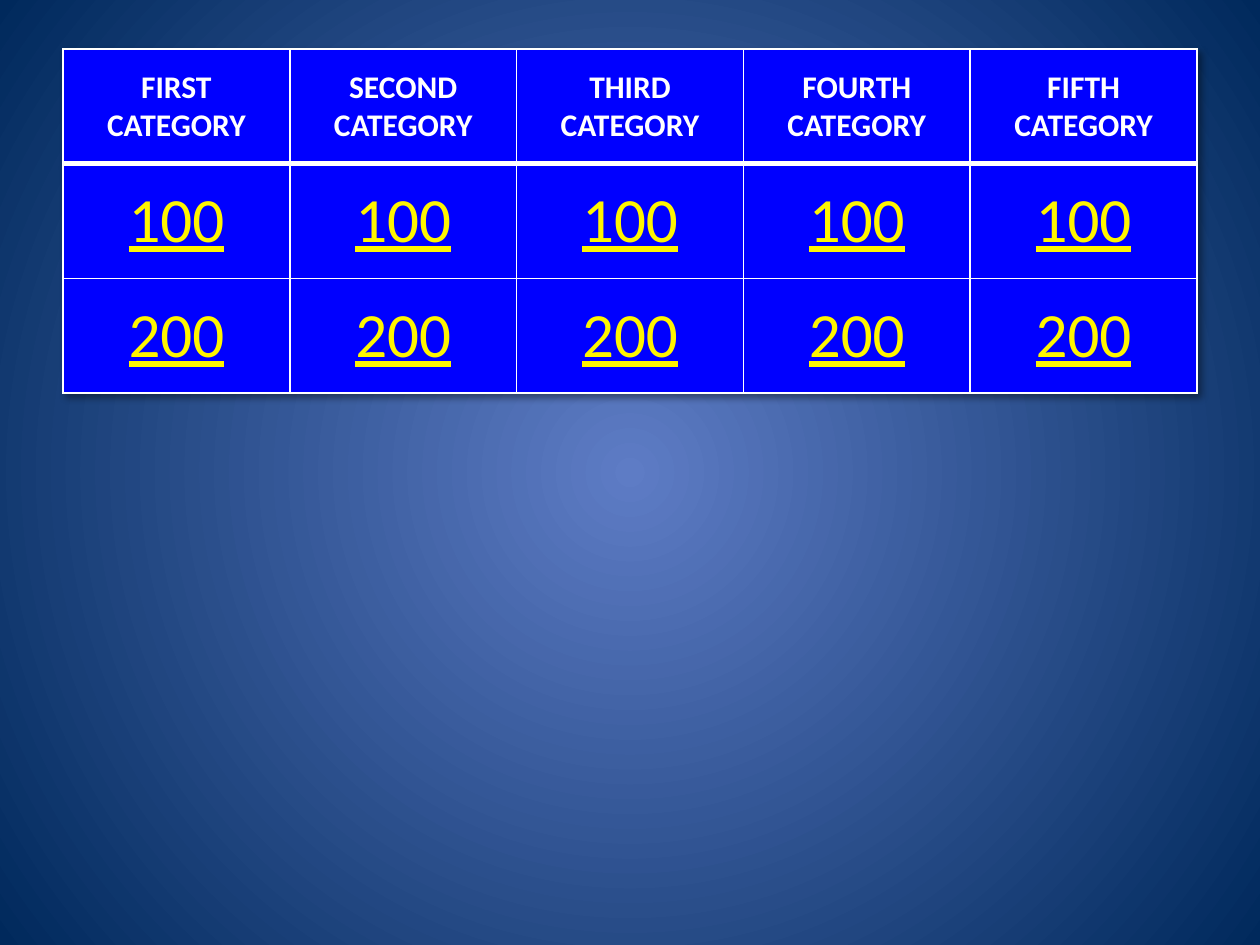
from dataclasses import dataclass

from lxml import etree
from pptx import Presentation
from pptx import util as u
from pptx.dml.color import RGBColor
from pptx.enum import text
from pptx.oxml import parse_xml
from pptx.oxml.ns import nsdecls


@dataclass(frozen=True)
class Theme:
    font: str = "Calibri"
    glow: str = "5E7CC5"
    edge: str = "00295C"
    cell: str = "0000FF"
    heading: str = "FFFFFF"
    value: str = "FFF500"
    border: str = "FFFFFF"
    shadow: str = "000000"
    heading_size: int = 18
    value_size: int = 36
    thin: int = 1
    thick: int = 3


THEME = Theme()
SLIDE_WIDTH, SLIDE_HEIGHT = u.Inches(10), u.Inches(7.5)
BOARD_LEFT, BOARD_TOP = 0.05, 0.052
BOARD_WIDTH = 1 - 2 * BOARD_LEFT
ROW_HEIGHT = u.Inches(0.91)
ORDINALS = ["FIRST", "SECOND", "THIRD", "FOURTH", "FIFTH"]
POINTS = [100, 200]


def paint_background(slide):
    fill = slide.background.fill
    fill.gradient()
    for stop, color in zip(fill.gradient_stops, (THEME.glow, THEME.edge)):
        stop.color.rgb = RGBColor.from_string(color)
    gradient = slide.element.find(".//{*}gradFill")
    gradient.replace(
        gradient.find("{*}lin"),
        parse_xml(
            f'<a:path {nsdecls("a")} path="circle">'
            '<a:fillToRect l="50000" t="50000" r="50000" b="50000"/></a:path>'
        ),
    )


def write_text(cell, content, *, size, color, bold=False, underline=False):
    paragraph = cell.text_frame.paragraphs[0]
    paragraph.alignment = text.PP_ALIGN.CENTER
    run = paragraph.add_run()
    run.text = content
    font = run.font
    font.name = THEME.font
    font.size = u.Pt(size)
    font.bold = bold
    font.underline = underline
    font.color.rgb = RGBColor.from_string(color)


def set_borders(cell, **widths):
    properties = cell._tc.get_or_add_tcPr()
    for index, side in enumerate("LRTB"):
        width = u.Pt(widths.get(side, THEME.thin))
        line = parse_xml(
            f'<a:ln{side} {nsdecls("a")} w="{width}"><a:solidFill>'
            f'<a:srgbClr val="{THEME.border}"/></a:solidFill></a:ln{side}>'
        )
        properties.insert(index, line)


def style_cell(cell, **border_widths):
    cell.vertical_anchor = text.MSO_ANCHOR.MIDDLE
    cell.fill.solid()
    cell.fill.fore_color.rgb = RGBColor.from_string(THEME.cell)
    set_borders(cell, **border_widths)


def add_shadow(table):
    effects = etree.fromstring(
        f'<a:effectLst {nsdecls("a")}><a:outerShdw blurRad="50800" dist="38100" '
        f'dir="2700000" algn="tl"><a:srgbClr val="{THEME.shadow}">'
        '<a:alpha val="40000"/></a:srgbClr></a:outerShdw></a:effectLst>'
    )
    table._tbl.tblPr.insert(0, effects)


def add_board(slide):
    rows = len(POINTS) + 1
    table = slide.shapes.add_table(
        rows,
        len(ORDINALS),
        int(SLIDE_WIDTH * BOARD_LEFT),
        int(SLIDE_HEIGHT * BOARD_TOP),
        int(SLIDE_WIDTH * BOARD_WIDTH),
        ROW_HEIGHT * rows,
    ).table
    add_shadow(table)
    for column, ordinal in enumerate(ORDINALS):
        heading = table.cell(0, column)
        style_cell(heading, B=THEME.thick)
        write_text(heading, f"{ordinal} CATEGORY", size=THEME.heading_size,
                   color=THEME.heading, bold=True)
        for row, points in enumerate(POINTS, start=1):
            cell = table.cell(row, column)
            style_cell(cell, T=THEME.thick if row == 1 else THEME.thin)
            write_text(cell, str(points), size=THEME.value_size,
                       color=THEME.value, underline=True)


def main():
    presentation = Presentation()
    presentation.slide_width = SLIDE_WIDTH
    presentation.slide_height = SLIDE_HEIGHT
    slide = presentation.slides.add_slide(presentation.slide_layouts[6])
    paint_background(slide)
    add_board(slide)
    presentation.save("out.pptx")


if __name__ == "__main__":
    main()
